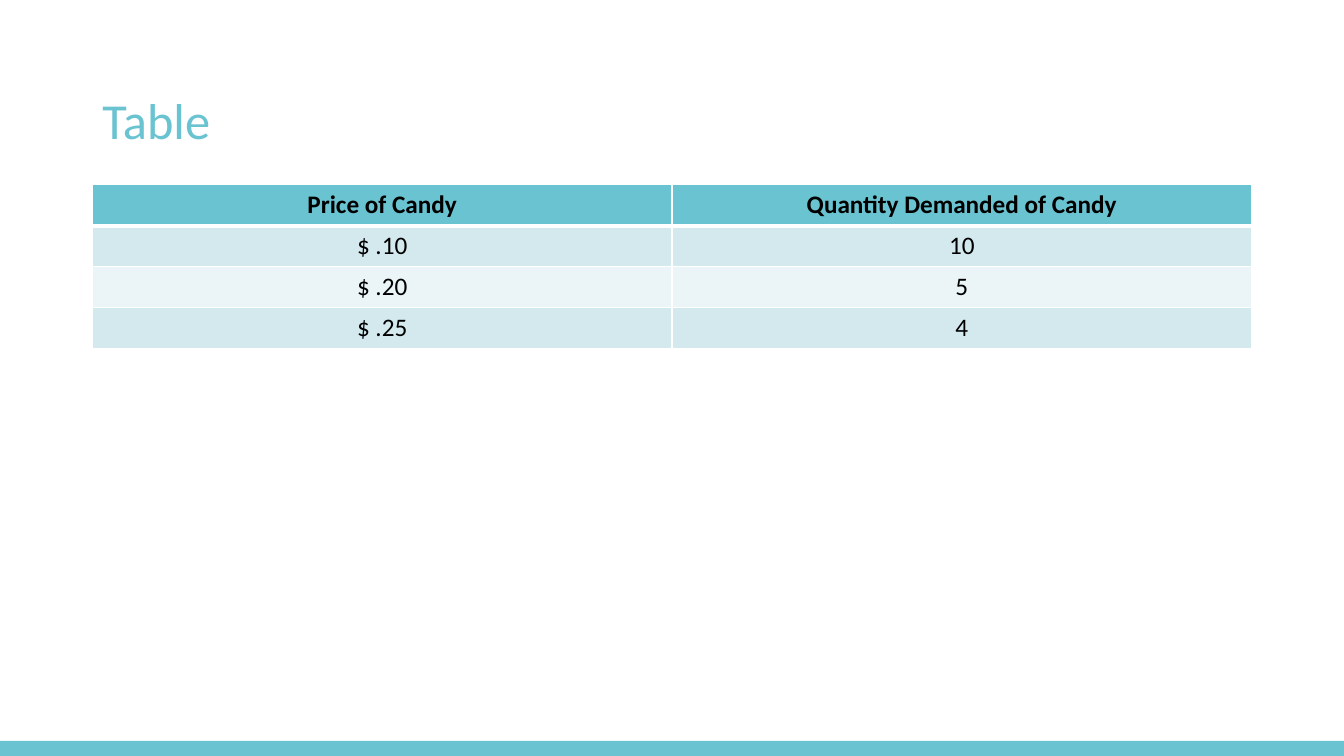
from lxml import etree
from pptx import Presentation
from pptx.dml.color import RGBColor
from pptx.enum.shapes import MSO_SHAPE
from pptx.enum.text import MSO_ANCHOR, PP_ALIGN
from pptx.oxml.ns import qn
from pptx.util import Pt

RECTANGLE = MSO_SHAPE.RECTANGLE
MIDDLE = MSO_ANCHOR.MIDDLE
LEFT, CENTER = PP_ALIGN.LEFT, PP_ALIGN.CENTER

WIDTH, HEIGHT = 960, 540
MARGIN = 66
CONTENT_WIDTH = WIDTH - 2 * MARGIN
FOOTER_HEIGHT = 10.8
ROW_HEIGHT = 29.2
COLORS = {
    "teal": "69C3D1",
    "band": "D4E9EE",
    "light_band": "EBF5F7",
    "black": "000000",
    "white": "FFFFFF",
}
DEMAND_ROWS = [
    ("Price of Candy", "Quantity Demanded of Candy"),
    ("$ .10", "10"),
    ("$ .20", "5"),
    ("$ .25", "4"),
]


class SlideBuilder:
    def __init__(self, page, font_name, colors):
        self.page = page
        self.font_name = font_name
        self.colors = colors

    def color(self, name):
        return RGBColor.from_string(self.colors[name])

    def bar(self, left, top, width, height, fill):
        shape = self.page.shapes.add_shape(
            RECTANGLE, Pt(left), Pt(top), Pt(width), Pt(height))
        shape.shadow.inherit = False
        shape.fill.solid()
        shape.fill.fore_color.rgb = self.color(fill)
        shape.line.fill.background()

    def add_span(self, para, text, size, color, bold=False, align=LEFT):
        para.alignment = align
        span = para.add_run()
        span.text = text
        span.font.name = self.font_name
        span.font.size = Pt(size)
        span.font.bold = bold
        span.font.color.rgb = self.color(color)

    def title(self, text, left, top, width, height):
        box = self.page.shapes.add_textbox(Pt(left), Pt(top), Pt(width), Pt(height))
        frame = box.text_frame
        frame.word_wrap = True
        frame.vertical_anchor = MIDDLE
        para = frame.paragraphs[0]
        para.line_spacing = 0.9
        self.add_span(para, text, 36, "teal")

    def cell_border(self, cell, side, width):
        properties = cell._tc.get_or_add_tcPr()
        line = etree.Element(qn(f"a:ln{side}"), w=str(Pt(width)))
        fill = etree.SubElement(line, qn("a:solidFill"))
        etree.SubElement(fill, qn("a:srgbClr"), val=self.colors["white"])
        # Border lines must come before the fill, in the order L, R, T, B.
        properties.insert(len(properties) - 1, line)

    def table(self, rows, left, top, width, row_height):
        column_count = len(rows[0])
        table = self.page.shapes.add_table(
            len(rows), column_count, Pt(left), Pt(top),
            Pt(width), Pt(row_height * len(rows))).table
        for column in table.columns:
            column.width = Pt(width / column_count)
        for row_index, texts in enumerate(rows):
            table.rows[row_index].height = Pt(row_height)
            header = row_index == 0
            fill = "teal" if header else ("light_band", "band")[row_index % 2]
            widths = {"L": 1, "R": 1,
                      "T": 3 if row_index == 1 else 1,
                      "B": 3 if header else 1}
            for column_index, text in enumerate(texts):
                cell = table.cell(row_index, column_index)
                cell.fill.solid()
                cell.fill.fore_color.rgb = self.color(fill)
                for side, line_width in widths.items():
                    self.cell_border(cell, side, line_width)
                self.add_span(cell.text_frame.paragraphs[0], text, 18, "black",
                              bold=header, align=CENTER)


def main():
    deck = Presentation()
    deck.slide_width, deck.slide_height = Pt(WIDTH), Pt(HEIGHT)
    page = deck.slides.add_slide(deck.slide_layouts[6])
    builder = SlideBuilder(page, "Calibri", COLORS)
    builder.bar(0, HEIGHT - FOOTER_HEIGHT, WIDTH, FOOTER_HEIGHT, "teal")
    builder.title("Table", MARGIN, 64, CONTENT_WIDTH, 47.5)
    builder.table(DEMAND_ROWS, MARGIN, 132, CONTENT_WIDTH, ROW_HEIGHT)
    deck.save("out.pptx")


if __name__ == "__main__":
    main()
